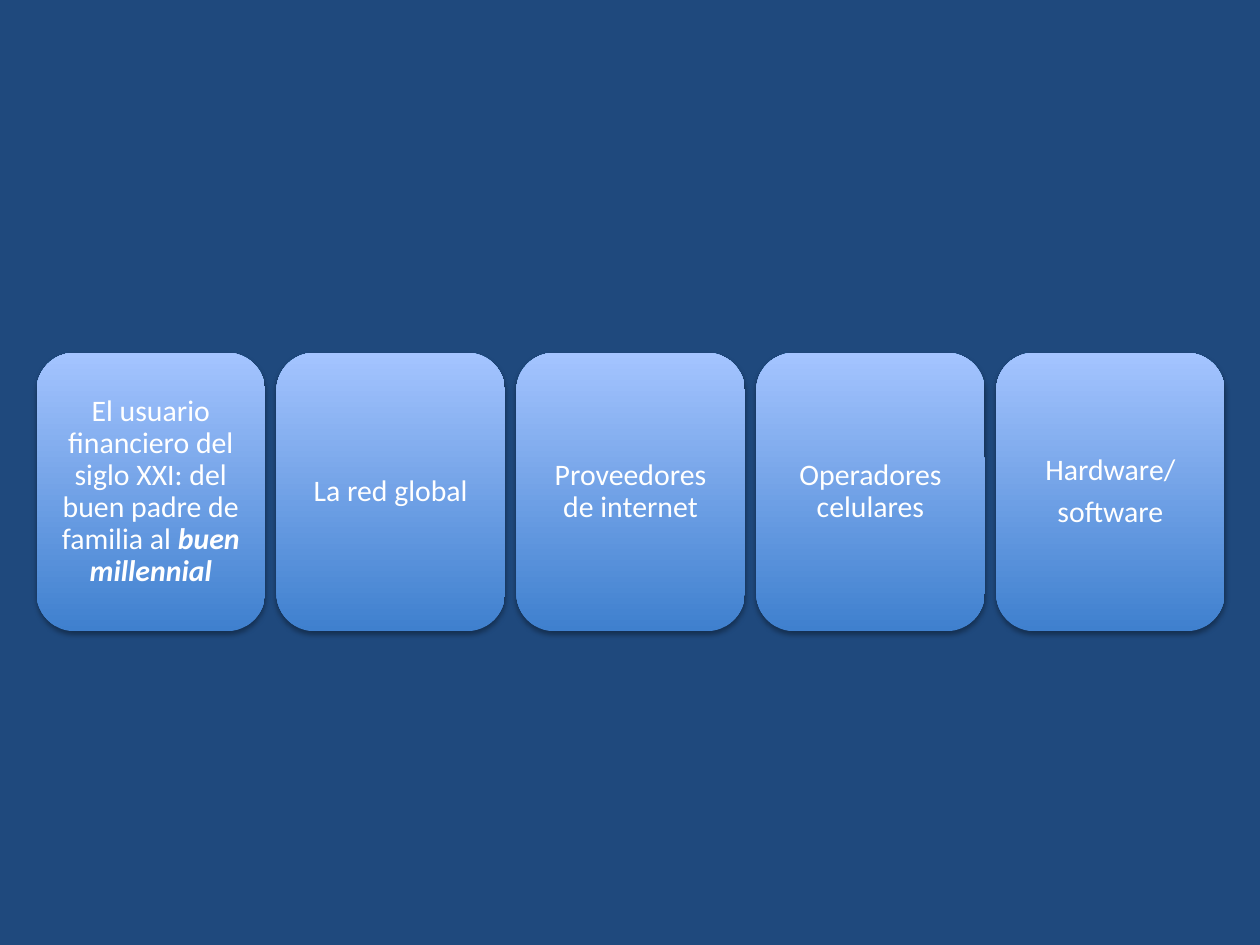
from lxml import etree
from pptx import Presentation
from pptx.dml.color import RGBColor
from pptx.enum import shapes, text
from pptx.oxml.ns import qn
from pptx.util import Inches, Pt

BACKGROUND = RGBColor(0x1F, 0x49, 0x7D)
CARD_BOTTOM = RGBColor(0x3F, 0x80, 0xCE)
CARD_TOP = RGBColor(0xA4, 0xC4, 0xFF)
WHITE = RGBColor(0xFF, 0xFF, 0xFF)

# Each card is a list of paragraphs; each paragraph is (plain text, emphasised text).
CARDS = [
    [("El usuario financiero del siglo XXI: del buen padre de familia al ", "buen millennial")],
    [("La red global", "")],
    [("Proveedores de internet", "")],
    [("Operadores celulares", "")],
    [("Hardware/", ""), ("software", "")],
]


def add_soft_shadow(shape):
    shape.shadow.inherit = False
    effects = shape._element.spPr.find(qn("a:effectLst"))
    shadow = etree.SubElement(
        effects, qn("a:outerShdw"), blurRad=str(Pt(3.1)), dist=str(Pt(1.8)),
        dir="5400000", rotWithShape="0")
    color = etree.SubElement(shadow, qn("a:srgbClr"), val="000000")
    etree.SubElement(color, qn("a:alpha"), val="35000")


def fill_text(text_frame, paragraphs):
    text_frame.word_wrap = True
    text_frame.vertical_anchor = text.MSO_ANCHOR.MIDDLE
    # The rounded corners already inset the text by about 0.09 inches.
    text_frame.margin_left = text_frame.margin_right = Inches(0.07)
    text_frame.margin_top = text_frame.margin_bottom = Inches(0.07)
    text_frame.text = "\n".join(plain for plain, _ in paragraphs)
    for paragraph, (_, emphasis) in zip(text_frame.paragraphs, paragraphs):
        paragraph.alignment = text.PP_ALIGN.CENTER
        paragraph.line_spacing = 0.9
        paragraph.space_after = Pt(6)
        if emphasis:
            run = paragraph.add_run()
            run.text = emphasis
            run.font.bold = run.font.italic = True
        for run in paragraph.runs:
            run.font.name = "Calibri"
            run.font.size = Pt(17)
            run.font.color.rgb = WHITE


def add_card(slide, left, top, width, height, paragraphs):
    card = slide.shapes.add_shape(
        shapes.MSO_SHAPE.ROUNDED_RECTANGLE, left, top, width, height)
    card.fill.gradient()
    card.fill.gradient_angle = 90
    for stop, position, color in zip(
            card.fill.gradient_stops, (0, 1), (CARD_BOTTOM, CARD_TOP)):
        stop.position = position
        stop.color.rgb = color
    card.line.fill.background()
    add_soft_shadow(card)
    fill_text(card.text_frame, paragraphs)


def add_card_row(slide, left, top, width, height, cards, gap):
    card_width = (width - gap * (len(cards) - 1)) // len(cards)
    for index, paragraphs in enumerate(cards):
        card_left = left + index * (card_width + gap)
        add_card(slide, card_left, top, card_width, height, paragraphs)


def main():
    presentation = Presentation()
    presentation.slide_width = Inches(10)
    presentation.slide_height = Inches(7.5)
    slide = presentation.slides.add_slide(presentation.slide_layouts[6])
    slide.background.fill.solid()
    slide.background.fill.fore_color.rgb = BACKGROUND
    add_card_row(slide, Inches(0.29), Inches(2.8), Inches(9.43), Inches(2.21),
                 CARDS, gap=Inches(0.09))
    presentation.save("out.pptx")


if __name__ == "__main__":
    main()
